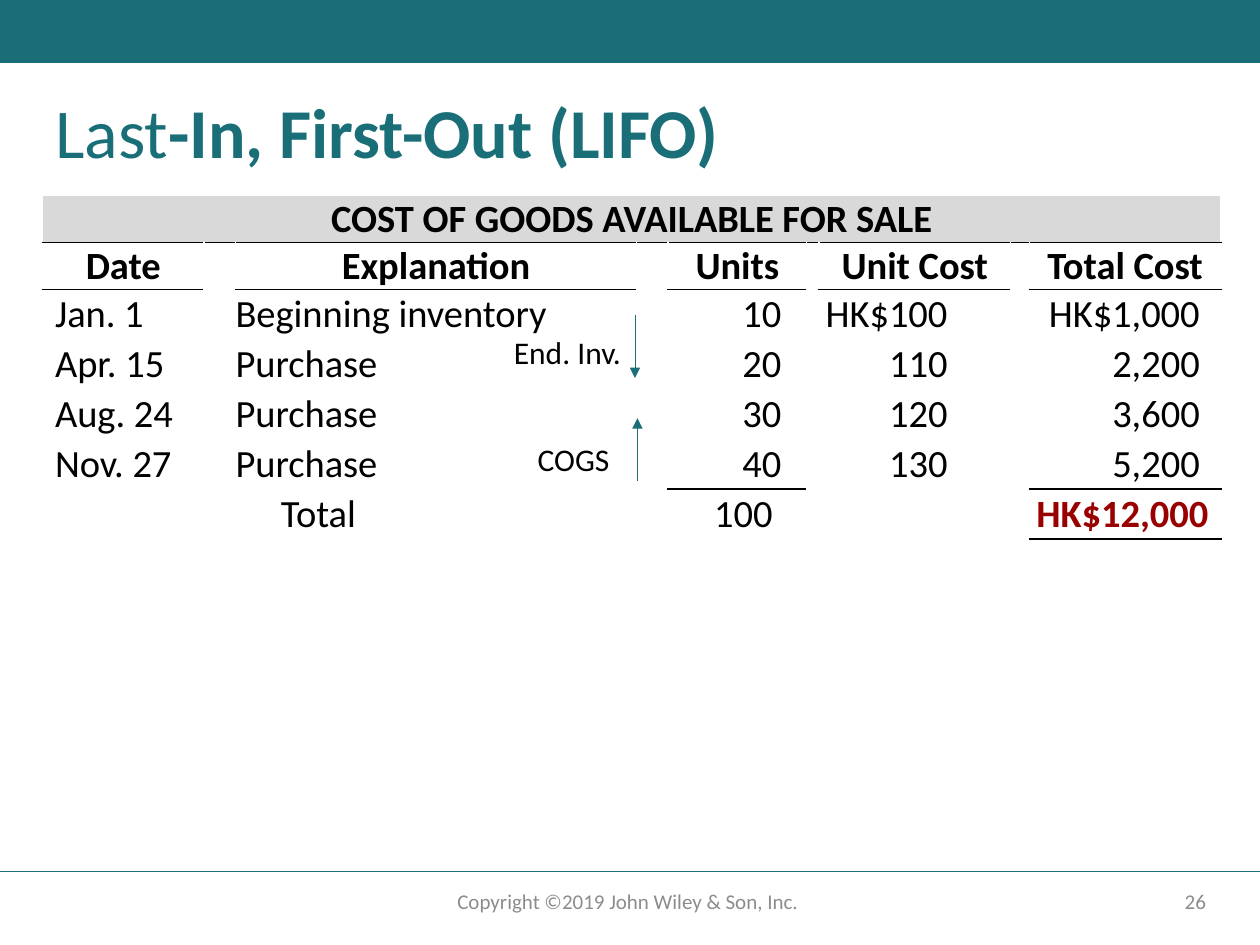
from dataclasses import dataclass

from lxml.etree import SubElement
from pptx import Presentation
from pptx.dml.color import RGBColor as Rgb
from pptx.enum.shapes import MSO_CONNECTOR as Connector, MSO_SHAPE as Shape
from pptx.enum.text import MSO_ANCHOR as Anchor, PP_ALIGN as Align
from pptx.oxml.ns import qn
from pptx.util import Cm, Pt


@dataclass
class Theme:
    font: str = "Calibri"
    teal: str = "196E78"
    black: str = "000000"
    white: str = "FFFFFF"
    band: str = "D9D9D9"
    footer: str = "8C8C8C"
    total: str = "990000"
    title_size: int = 40
    table_size: int = 22
    label_size: int = 18
    footer_size: int = 12


theme = Theme()


def style(paragraph, size, color, bold=False, align=Align.LEFT):
    paragraph.alignment = align
    for font in [paragraph.font] + [run.font for run in paragraph.runs]:
        font.name, font.size, font.bold = theme.font, Pt(size), bold
        font.color.rgb = Rgb.from_string(color)


def add_line(x1, y1, x2, y2, width, arrow=False):
    line = slide.shapes.add_connector(Connector.STRAIGHT, Cm(x1), Cm(y1), Cm(x2), Cm(y2))
    line.line.color.rgb = Rgb.from_string(theme.teal)
    line.line.width = Pt(width)
    if arrow:
        SubElement(line.line._get_or_add_ln(), qn("a:tailEnd"), type="triangle")
    SubElement(line._element.spPr, qn("a:effectLst"))


prs = Presentation()
prs.slide_width, prs.slide_height = Cm(25.4), Cm(19.05)
slide = prs.slides.add_slide(prs.slide_layouts[5])

# Top band and footer rule
band = slide.shapes.add_shape(Shape.RECTANGLE, 0, 0, prs.slide_width, Cm(1.27))
band.shadow.inherit = False
band.fill.solid()
band.fill.fore_color.rgb = Rgb.from_string(theme.teal)
band.line.fill.background()
add_line(0, 17.57, 25.4, 17.57, 1)

# Title, with only the first word in regular weight
title = slide.shapes.title
title.left, title.top, title.width, title.height = Cm(0.86), Cm(1.83), Cm(20.52), Cm(1.8)
title.text_frame.vertical_anchor = Anchor.MIDDLE
heading = title.text_frame.paragraphs[0]
heading.line_spacing = 0.9
for words in ("Last", "-In, First-Out (LIFO)"):
    heading.add_run().text = words
style(heading, theme.title_size, theme.teal)
heading.runs[1].font.bold = True

# Inventory table: narrow empty columns separate the data columns
DATA_COLUMNS = (0, 2, 4, 6, 8)
column_widths = (3.25, 0.64, 8.08, 0.64, 2.79, 0.25, 3.86, 0.38, 3.86)
rows = [
    ("COST OF GOODS AVAILABLE FOR SALE", "", "", "", ""),
    ("Date", "Explanation", "Units", "Unit Cost", "Total Cost"),
    ("Jan. 1", "Beginning inventory", "10", "HK$100", "HK$1,000 "),
    ("Apr. 15", "Purchase", "20", "110", "2,200 "),
    ("Aug. 24", "Purchase", "30", "120", "3,600 "),
    ("Nov. 27", "Purchase", "40", "130", "5,200 "),
    ("Total", "", "100 ", "", "HK$12,000 "),
]
last_row = len(rows) - 1
# Columns with a black rule below, by row
ruled = {0: range(9), 1: DATA_COLUMNS, 5: (4, 8), 6: (8,)}
left_insets = {0: 0.25}
right_insets = {4: 0.51, 6: 1.27, 8: 0.25}

inventory = slide.shapes.add_table(
    len(rows), len(column_widths), Cm(0.86), Cm(3.94), Cm(sum(column_widths)), Cm(6.65)
).table
inventory.first_row = inventory.horz_banding = False
for column, width in zip(inventory.columns, column_widths):
    column.width = Cm(width)

for r, texts in enumerate(rows):
    inventory.rows[r].height = Cm(0.95)
    header = r < 2
    for c in range(len(column_widths)):
        cell = inventory.cell(r, c)
        grand_total = r == last_row and c == 8
        if c in DATA_COLUMNS:
            cell.text_frame.text = texts[DATA_COLUMNS.index(c)]
        align = Align.CENTER if header else Align.RIGHT if c >= 4 else Align.LEFT
        color = theme.total if grand_total else theme.black
        style(cell.text_frame.paragraphs[0], theme.table_size, color, header or grand_total, align)

        cell.vertical_anchor = Anchor.BOTTOM
        cell.margin_top = cell.margin_bottom = Cm(0 if header else 0.03)
        cell.margin_left = Cm(0 if header else left_insets.get(c, 0))
        cell.margin_right = Cm(0 if header else right_insets.get(c, 0))

        edges = {
            "a:lnL": theme.white,
            "a:lnR": theme.white,
            "a:lnT": theme.black if c in ruled.get(r - 1, ()) else theme.white,
            "a:lnB": theme.black if c in ruled.get(r, ()) else theme.white,
        }
        for tag, edge_color in edges.items():
            edge = SubElement(cell._tc.get_or_add_tcPr(), qn(tag), w=str(Pt(1)))
            SubElement(SubElement(edge, qn("a:solidFill")), qn("a:srgbClr"), val=edge_color)
        if r == 0:
            cell.fill.solid()
            cell.fill.fore_color.rgb = Rgb.from_string(theme.band)
        else:
            cell.fill.background()

inventory.cell(0, 0).merge(inventory.cell(0, 8))
inventory.cell(last_row, 0).merge(inventory.cell(last_row, 2))
inventory.cell(last_row, 0).margin_left = Cm(4.8)

# Flow arrows: ending inventory runs down, cost of goods sold runs up
add_line(12.8, 6.35, 12.8, 7.62, 0.5, arrow=True)
add_line(12.85, 9.7, 12.85, 8.43, 0.5, arrow=True)

# Arrow labels, footer and page number
captions = [
    ("End. Inv.", 10.11, 6.58, 2.74, theme.label_size, theme.black, Align.LEFT, Anchor.TOP),
    ("COGS", 10.59, 8.74, 2.11, theme.label_size, theme.black, Align.LEFT, Anchor.TOP),
    ("Copyright ©2019 John Wiley & Son, Inc. ", 8.41, 17.65, 8.59,
     theme.footer_size, theme.footer, Align.CENTER, Anchor.MIDDLE),
    ("26", 17.93, 17.65, 6.63, theme.footer_size, theme.footer, Align.RIGHT, Anchor.MIDDLE),
]
for text, left, top, width, size, color, align, anchor in captions:
    frame = slide.shapes.add_textbox(Cm(left), Cm(top), Cm(width), Cm(1.02)).text_frame
    frame.word_wrap = True
    frame.vertical_anchor = anchor
    frame.text = text
    style(frame.paragraphs[0], size, color, align=align)

prs.save("out.pptx")
